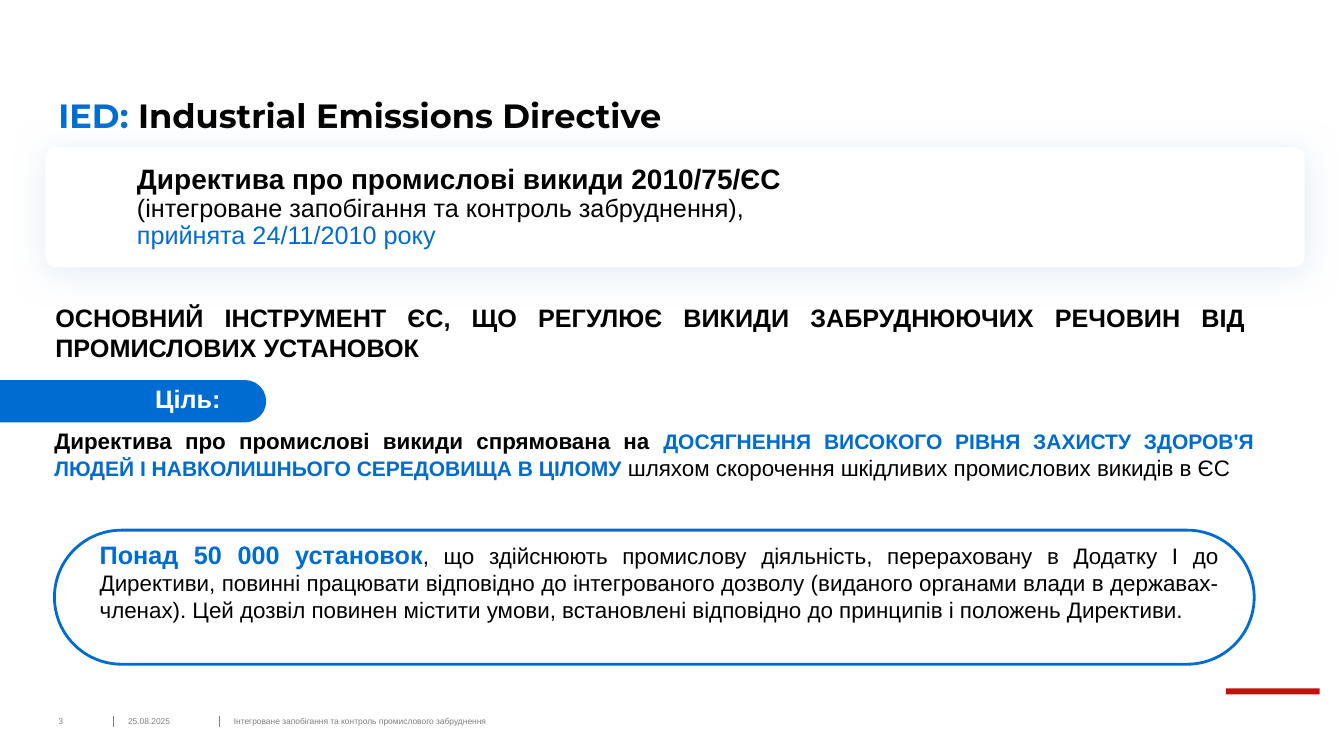
from dataclasses import dataclass

from lxml import etree
from pptx import Presentation
from pptx import util as u
from pptx.dml import color
from pptx.enum import shapes, text
from pptx.oxml import ns

WIDTH, HEIGHT = u.Inches(13.33), u.Inches(7.5)


@dataclass(frozen=True)
class Theme:
    blue: str = "006CD2"
    black: str = "000000"
    white: str = "FFFFFF"
    gray: str = "7F7F7F"
    red: str = "C80F0F"
    glow: str = "E2EDF7"
    body_font: str = "Arial"
    title_font: str = "Montserrat"
    title: int = 24
    heading: int = 20
    lead: int = 18
    body: int = 16
    caps: int = 15
    footer: int = 6


THEME = Theme()


def rgb(value):
    return color.RGBColor.from_string(value)


def across(share):
    return round(WIDTH * share / 100)


def down(share):
    return round(HEIGHT * share / 100)


def place(left, top, width, height):
    return across(left), down(top), across(width), down(height)


def add_child(parent, tag, **attributes):
    return etree.SubElement(parent, ns.qn(tag), attributes)


def add_panel(slide, area, fill=None, outline=None, corner=None):
    kind = shapes.MSO_SHAPE.RECTANGLE if corner is None else shapes.MSO_SHAPE.ROUNDED_RECTANGLE
    panel = slide.shapes.add_shape(kind, *place(*area))
    panel.shadow.inherit = False
    if corner is not None:
        panel.adjustments[0] = corner
    if fill:
        panel.fill.solid()
        panel.fill.fore_color.rgb = rgb(fill)
    else:
        panel.fill.background()
    if outline:
        panel.line.color.rgb = rgb(outline)
        panel.line.width = u.Pt(2)
    else:
        panel.line.fill.background()
    return panel


def add_glow(panel):
    effects = panel._element.spPr.find(ns.qn("a:effectLst"))
    shadow = add_child(effects, "a:outerShdw", blurRad=str(u.Pt(25.9)),
                       dist=str(u.Pt(4)), dir="5400000", algn="t", rotWithShape="0")
    add_child(shadow, "a:srgbClr", val=THEME.glow)


def add_divider(slide, left):
    x = across(left)
    divider = slide.shapes.add_connector(
        shapes.MSO_CONNECTOR.STRAIGHT, x, down(94.67), x, down(96.13))
    divider.line.color.rgb = rgb(THEME.gray)
    divider.line.width = u.Pt(0.75)
    add_child(divider._element.spPr, "a:effectLst")


def add_text(slide, area, paragraphs, font=THEME.body_font, align=None, padded=True,
             anchor=text.MSO_ANCHOR.TOP, spacing=None, gap=0, tab=None):
    frame = slide.shapes.add_textbox(*place(*area)).text_frame
    frame.word_wrap = True
    frame.vertical_anchor = anchor
    if not padded:
        frame.margin_left = frame.margin_right = frame.margin_top = frame.margin_bottom = 0
    for index, pieces in enumerate(paragraphs):
        paragraph = frame.add_paragraph() if index else frame.paragraphs[0]
        if tab:
            tabs = add_child(paragraph._p.get_or_add_pPr(), "a:tabLst")
            add_child(tabs, "a:tab", pos=str(tab), algn="l")
        paragraph.alignment = align
        paragraph.line_spacing = spacing
        if index and gap:
            paragraph.space_before = u.Pt(gap)
        for words, size, tint, bold in pieces:
            run = paragraph.add_run()
            run.text = words
            run.font.name = font
            run.font.size = u.Pt(size)
            run.font.color.rgb = rgb(tint)
            run.font.bold = bold
    return frame


def add_footer(slide):
    for left in (8.48, 16.35):
        add_divider(slide, left)
    entries = (
        (4.35, 3.83, "3"),
        (9.53, 5.93, "25.08.2025"),
        (17.4, 56.11, "Інтегроване запобігання та контроль промислового забруднення"),
    )
    for left, width, words in entries:
        add_text(slide, (left, 94.67, width, 1.33),
                 [[(words, THEME.footer, THEME.gray, False)]],
                 padded=False, anchor=text.MSO_ANCHOR.MIDDLE)
    add_panel(slide, (91.22, 91.07, 6.98, 0.8), fill=THEME.red)


def add_directive(slide):
    add_text(slide, (4.35, 5.33, 60.24, 12.67),
             [[("IED: ", THEME.title, THEME.blue, True),
               ("Industrial Emissions Directive", THEME.title, THEME.black, True)]],
             font=THEME.title_font, padded=False, anchor=text.MSO_ANCHOR.BOTTOM, spacing=0.9)
    add_glow(add_panel(slide, (3.38, 19.47, 93.7, 15.87), fill=THEME.white, corner=0.09))
    add_text(slide, (9.45, 21.2, 86.5, 12.67), [
        [("Директива про промислові викиди 2010/75/ЄС", THEME.heading, THEME.black, True)],
        [("(інтегроване запобігання та контроль забруднення),", THEME.lead, THEME.black, False)],
        [("прийнята 24/11/2010 року", THEME.lead, THEME.blue, False)],
    ], spacing=0.9)


def add_goal(slide):
    justify = text.PP_ALIGN.JUSTIFY
    add_text(slide, (3.38, 39.33, 90.02, 9.47), [[
        ("ОСНОВНИЙ ІНСТРУМЕНТ ЄС, ЩО РЕГУЛЮЄ ВИКИДИ ЗАБРУДНЮЮЧИХ РЕЧОВИН "
         "ВІД ПРОМИСЛОВИХ УСТАНОВОК", THEME.lead, THEME.black, True)]], align=justify)
    add_panel(slide, (-5.1, 50.27, 24.91, 5.6), fill=THEME.blue, corner=0.5)
    add_text(slide, (4.05, 50.67, 89.27, 15.87), [
        [("\tЦіль:", THEME.lead, THEME.white, True)],
        [("Директива про промислові викиди спрямована на ", THEME.body, THEME.black, True),
         ("ДОСЯГНЕННЯ ВИСОКОГО РІВНЯ ЗАХИСТУ ЗДОРОВ'Я ЛЮДЕЙ І НАВКОЛИШНЬОГО "
          "СЕРЕДОВИЩА В ЦІЛОМУ ", THEME.caps, THEME.blue, True),
         ("шляхом скорочення шкідливих промислових викидів в ЄС",
          THEME.body, THEME.black, False)],
    ], align=justify, padded=False, gap=10, tab=u.Inches(1))


def add_permits(slide):
    add_panel(slide, (4.05, 70.13, 89.27, 17.73), outline=THEME.blue, corner=0.5)
    add_text(slide, (6.68, 70.67, 84.77, 16.13), [[
        ("Понад 50 000 установок", THEME.lead, THEME.blue, True),
        (", що здійснюють промислову діяльність, перераховану в Додатку I до Директиви, "
         "повинні працювати відповідно до інтегрованого дозволу (виданого органами влади "
         "в державах-членах). Цей дозвіл повинен містити умови, встановлені відповідно "
         "до принципів і положень Директиви.", THEME.body, THEME.black, False),
    ]], align=text.PP_ALIGN.JUSTIFY)


def main():
    deck = Presentation()
    deck.slide_width, deck.slide_height = WIDTH, HEIGHT
    slide = deck.slides.add_slide(deck.slide_layouts[6])
    add_footer(slide)
    add_directive(slide)
    add_goal(slide)
    add_permits(slide)
    deck.save("out.pptx")


if __name__ == "__main__":
    main()
